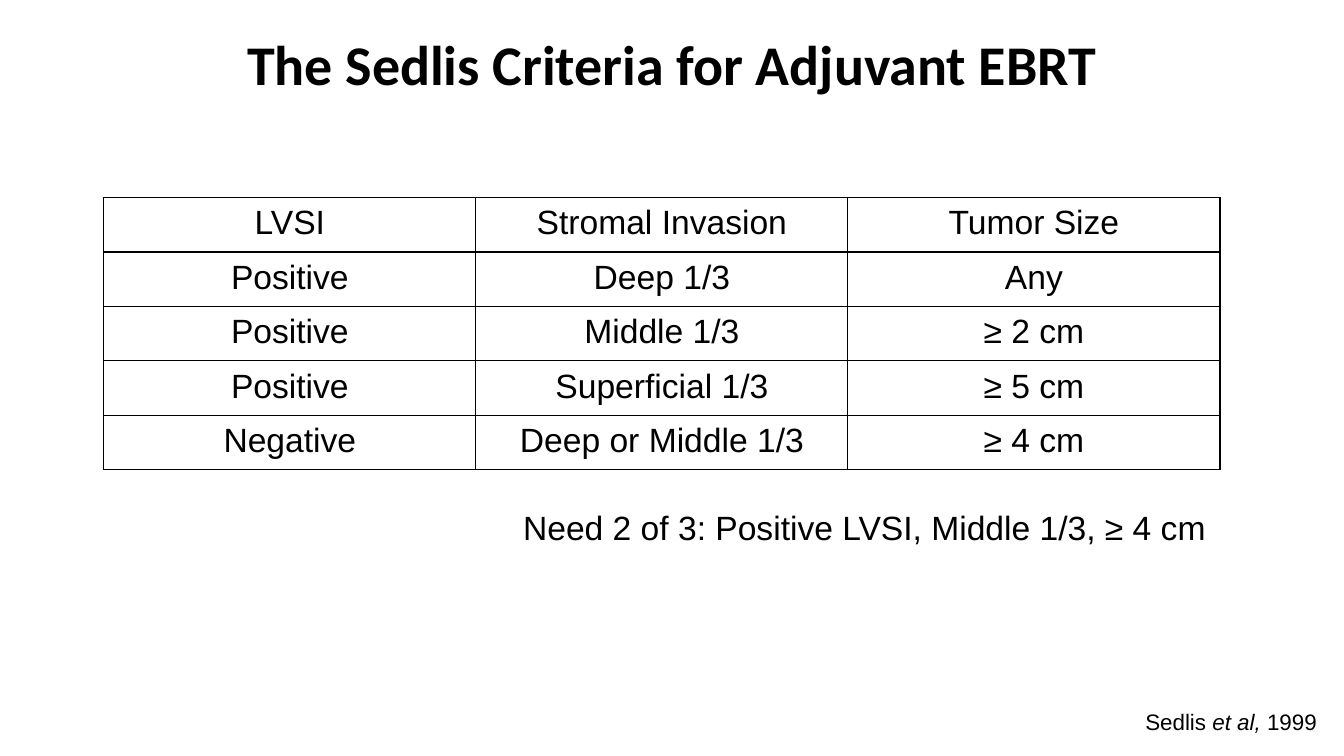
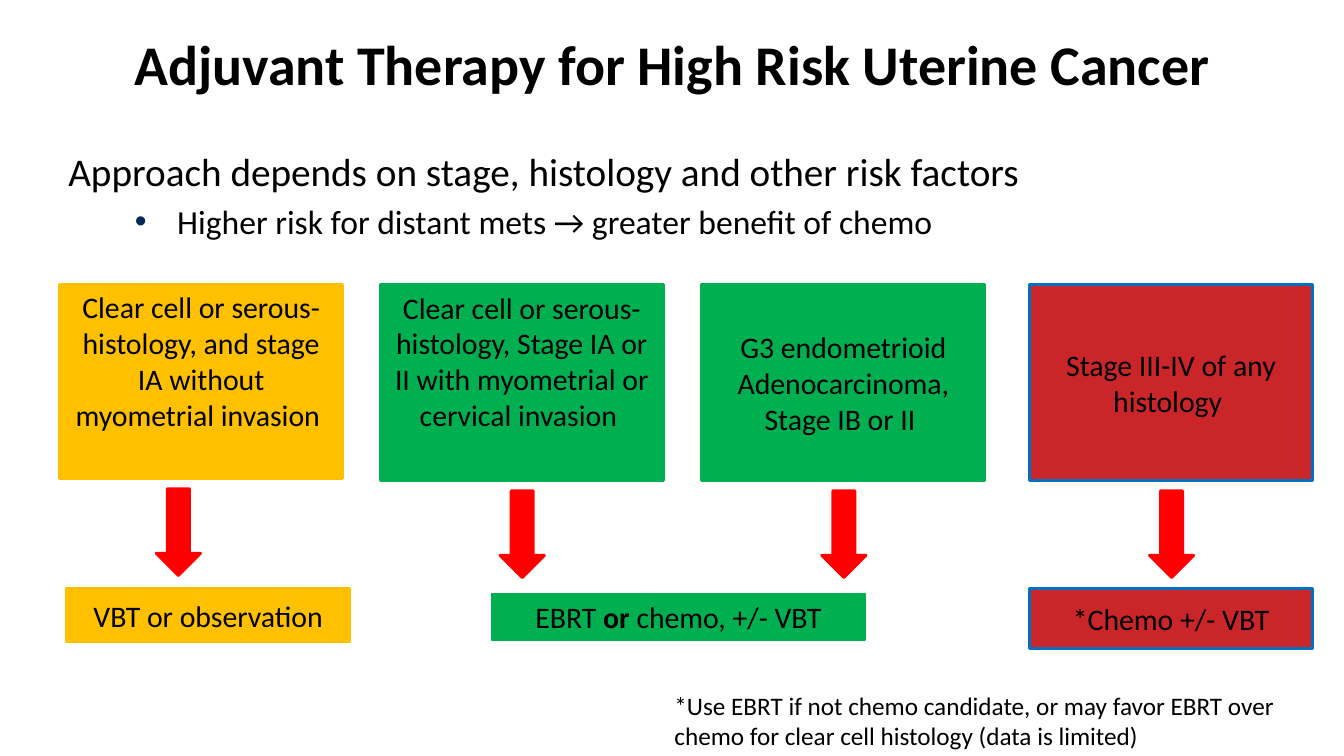
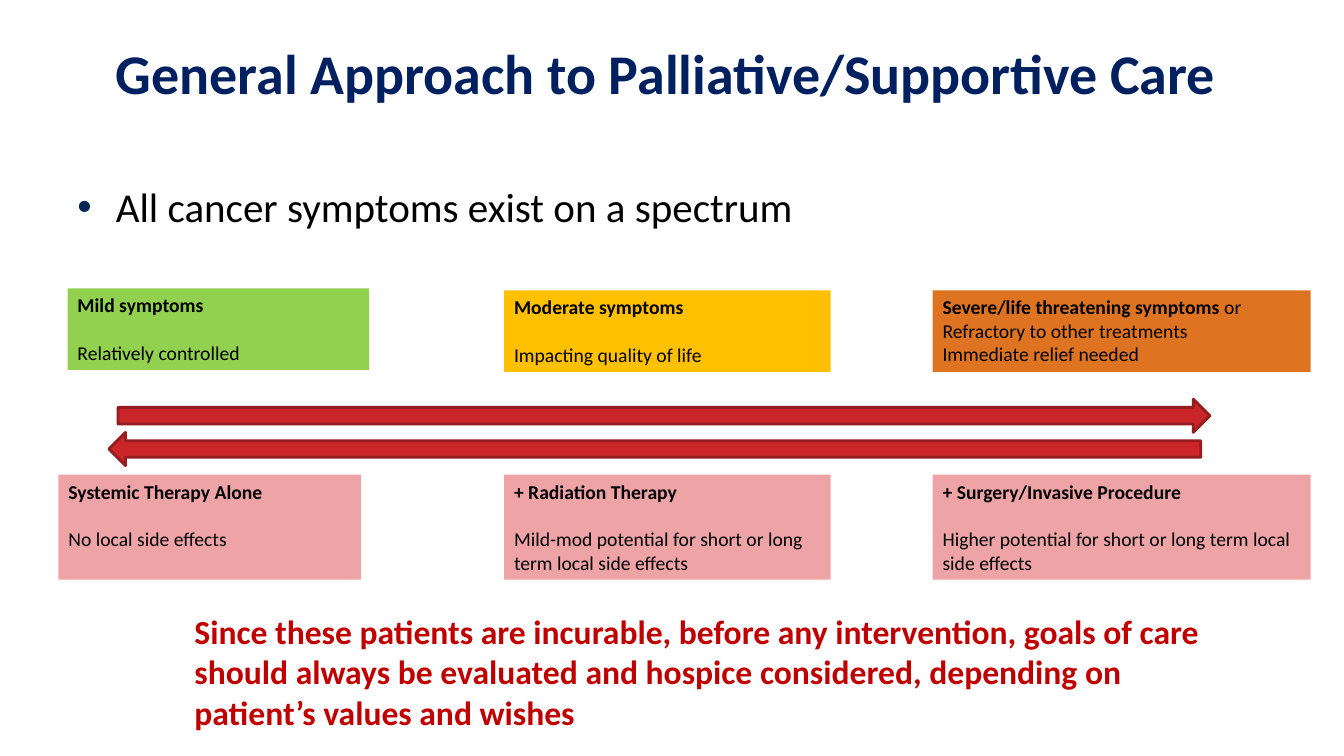
import pptx
import pptx.dml.color
import pptx.enum.shapes
import pptx.enum.text
import pptx.oxml
import pptx.oxml.ns
import pptx.util
from pptx.util import Inches

COLORS = {
    "black": "000000", "navy": "002060", "bullet": "002855", "amber": "FFC000",
    "green": "00B050", "red": "CA262A", "dark_red": "951C1F", "blue": "0070C0",
    "arrow": "FF0000", "lime": "92D050", "orange": "DE7422", "pink": "EEA4A6",
    "warning": "C00000",
}
ALIGN = pptx.enum.text.PP_ALIGN
ANCHOR = pptx.enum.text.MSO_ANCHOR
SHAPE = pptx.enum.shapes.MSO_SHAPE
WIDE_INSETS = (0.13, 0.07)
NARROW_INSETS = (0.1, 0.05)
BLANK_LAYOUT = 6


def rgb(name):
    return pptx.dml.color.RGBColor.from_string(COLORS[name])


def add_child(parent, xml):
    child = pptx.oxml.parse_xml(
        xml.replace("/>", f" {pptx.oxml.ns.nsdecls('a')}/>", 1)
        if xml.endswith("/>") and xml.count("<") == 1
        else xml.replace(">", f" {pptx.oxml.ns.nsdecls('a')}>", 1))
    parent.append(child)


def add_bullet(paragraph, left, hanging):
    properties = paragraph._p.get_or_add_pPr()
    properties.set("marL", str(Inches(left)))
    properties.set("indent", str(-Inches(hanging)))
    add_child(properties, f'<a:buClr><a:srgbClr val="{COLORS["bullet"]}"/></a:buClr>')
    add_child(properties, '<a:buFont typeface="Arial"/>')
    add_child(properties, '<a:buChar char="•"/>')


def add_run(paragraph, text, size, font="Calibri", color="black", bold=False, italic=False):
    run = paragraph.add_run()
    run.text = text
    run.font.name = font
    run.font.size = pptx.util.Pt(size)
    run.font.bold = bold
    run.font.italic = italic
    run.font.color.rgb = rgb(color)


def write(frame, paragraphs, size, align=ALIGN.LEFT, anchor=ANCHOR.TOP,
          insets=NARROW_INSETS, gap=0, **style):
    """Fill a frame; each paragraph is a list of (text, style changes)."""
    frame.word_wrap = True
    frame.vertical_anchor = anchor
    frame.margin_left = frame.margin_right = Inches(insets[0])
    frame.margin_top = frame.margin_bottom = Inches(insets[1])
    for index, runs in enumerate(paragraphs):
        paragraph = frame.add_paragraph() if index else frame.paragraphs[0]
        paragraph.alignment = align
        if index and gap:
            paragraph.space_before = pptx.util.Pt(gap)
        for text, changes in runs:
            add_run(paragraph, text, **{"size": size, **style, **changes})


def plain(text):
    return [[(text, {})]]


def add_text(slide, box, paragraphs, size, **options):
    frame = slide.shapes.add_textbox(*map(Inches, box)).text_frame
    write(frame, paragraphs, size, **options)
    return frame


def add_title(slide, text, box=(0, 0, 13.33, 1.25), **options):
    add_text(slide, box, plain(text), 40, align=ALIGN.CENTER,
             anchor=ANCHOR.MIDDLE, bold=True, **options)


def add_block(slide, box, fill, line=None, line_width=2, kind=SHAPE.RECTANGLE):
    shape = slide.shapes.add_shape(kind, *map(Inches, box))
    shape.shadow.inherit = False
    shape.fill.solid()
    shape.fill.fore_color.rgb = rgb(fill)
    if line:
        shape.line.color.rgb = rgb(line)
        shape.line.width = pptx.util.Pt(line_width)
    else:
        shape.line.fill.background()
    return shape


def add_borders(cell):
    properties = cell._tc.get_or_add_tcPr()
    for side in ("lnL", "lnR", "lnT", "lnB"):
        add_child(properties, f'<a:{side} w="12700"><a:solidFill><a:srgbClr '
                              f'val="{COLORS["black"]}"/></a:solidFill></a:{side}>')


def add_grid(slide, left, top, column_width, row_height, rows):
    table = slide.shapes.add_table(
        len(rows), len(rows[0]), Inches(left), Inches(top),
        Inches(column_width * len(rows[0])), Inches(row_height * len(rows))).table
    table.first_row = table.horz_banding = False
    for column in table.columns:
        column.width = Inches(column_width)
    for row, texts in zip(table.rows, rows):
        row.height = Inches(row_height)
        for cell, text in zip(row.cells, texts):
            add_borders(cell)
            cell.fill.background()
            cell.margin_left = cell.margin_right = Inches(WIDE_INSETS[0])
            cell.margin_top = cell.margin_bottom = Inches(WIDE_INSETS[1])
            paragraph = cell.text_frame.paragraphs[0]
            paragraph.alignment = ALIGN.CENTER
            add_run(paragraph, text, 24, font="Arial")


def build_sedlis_slide(slide):
    add_title(slide, "The Sedlis Criteria for Adjuvant EBRT", insets=WIDE_INSETS)
    add_grid(slide, 1.03, 1.96, 3.69, 0.54, [
        ("LVSI", "Stromal Invasion", "Tumor Size"),
        ("Positive", "Deep 1/3", "Any"),
        ("Positive", "Middle 1/3", "≥ 2 cm"),
        ("Positive", "Superficial 1/3", "≥ 5 cm"),
        ("Negative", "Deep or Middle 1/3", "≥ 4 cm"),
    ])
    add_text(slide, (4.11, 4.96, 7.98, 0.54),
             plain("Need 2 of 3: Positive LVSI, Middle 1/3, ≥ 4 cm"), 24,
             align=ALIGN.RIGHT, insets=WIDE_INSETS, font="Arial")
    add_text(slide, (11.23, 6.96, 2.1, 0.4),
             [[("Sedlis ", {}), ("et al, ", {"italic": True}), ("1999", {})]], 16,
             insets=WIDE_INSETS, font="Arial")


def build_uterine_slide(slide):
    add_title(slide, "Adjuvant Therapy for High Risk Uterine Cancer", insets=WIDE_INSETS)
    approach = add_text(slide, (0.58, 1.41, 12.44, 1.4), [
        [("Approach depends on stage, histology and other risk factors", {})],
        [("Higher risk for distant mets → greater benefit of chemo", {"size": 24})],
    ], 28, gap=5)
    add_bullet(approach.paragraphs[1], 1.08, 0.42)

    card_top, card_width = 2.82, 2.81
    # left, height, arrow offset, fill, line, anchor, text
    groups = [
        (0.59, 1.93, 0.96, "amber", "amber", ANCHOR.TOP,
         "Clear cell or serous-histology, and stage IA without myometrial invasion "),
        (3.77, 1.95, 1.19, "green", "green", ANCHOR.TOP,
         "Clear cell or serous-histology, Stage IA or II with myometrial or cervical invasion "),
        (6.96, 1.95, 1.19, "green", "green", ANCHOR.MIDDLE,
         "G3 endometrioid Adenocarcinoma, Stage IB or II "),
        (10.21, 1.95, 1.19, "red", "blue", ANCHOR.MIDDLE,
         "Stage III-IV of any histology "),
    ]
    for left, height, offset, fill, line, anchor, text in groups:
        card = add_block(slide, (left, card_top, card_width, height), fill, line)
        write(card.text_frame, plain(text), 21.3, align=ALIGN.CENTER, anchor=anchor)
        add_block(slide, (left + offset, card_top + height + 0.1, 0.44, 0.86),
                  "arrow", "arrow", kind=SHAPE.DOWN_ARROW)

    treatments = [
        ((0.66, 5.84, card_width, 0.53), "amber", "amber", 2, plain("VBT or observation")),
        ((4.88, 5.89, 3.7, 0.46), "green", "green", 0.75,
         [[("EBRT ", {}), ("or", {"bold": True}), (" chemo, +/- VBT", {})]]),
        ((10.21, 5.84, card_width, 0.59), "red", "blue", 2, plain("*Chemo +/- VBT")),
    ]
    for box, fill, line, line_width, paragraphs in treatments:
        block = add_block(slide, box, fill, line, line_width)
        write(block.text_frame, paragraphs, 21.3, align=ALIGN.CENTER, anchor=ANCHOR.MIDDLE)
    add_text(slide, (6.59, 6.8, 6.75, 0.71),
             plain("*Use EBRT if not chemo candidate, or may favor EBRT over "
                   "chemo for clear cell histology (data is limited)"), 18)


def build_palliative_slide(slide):
    add_title(slide, "General Approach to Palliative/Supportive Care ",
              box=(0, 0.01, 13.33, 1.41), color="navy")
    spectrum = add_text(slide, (0.67, 1.75, 12.08, 0.7),
                        plain("All cancer symptoms exist on a spectrum"), 29.3)
    add_bullet(spectrum.paragraphs[0], 0.38, 0.38)
    for left, top, kind in ((1.17, 3.96, SHAPE.RIGHT_ARROW), (1.08, 4.29, SHAPE.LEFT_ARROW)):
        add_block(slide, (left, top, 10.83, 0.33), "red", "dark_red", kind=kind)

    bold = {"bold": True}
    line_gap = 17
    boxes = [
        ((0.67, 2.86, 2.99, 0.81), "lime", line_gap,
         [[("Mild symptoms", bold)], [("Relatively controlled", {})]]),
        ((5, 2.88, 3.24, 0.81), "amber", line_gap,
         [[("Moderate symptoms", bold)], [("Impacting quality of life", {})]]),
        ((9.25, 2.88, 3.75, 0.81), "orange", 0,
         [[("Severe/life threatening symptoms ", bold), ("or", {})],
          [("Refractory to other treatments", {})], [("Immediate relief needed", {})]]),
        ((0.58, 4.71, 3, 1.04), "pink", line_gap,
         [[("Systemic Therapy Alone", bold)], [("No local side effects", {})]]),
        ((5, 4.71, 3.24, 1.04), "pink", line_gap,
         [[("+ Radiation Therapy", bold)],
          [("Mild-mod potential for short or long term local side effects", {})]]),
        ((9.25, 4.71, 3.75, 1.04), "pink", line_gap,
         [[("+ Surgery/Invasive Procedure", bold)],
          [("Higher potential for short or long term local side effects", {})]]),
    ]
    for box, fill, gap, paragraphs in boxes:
        write(add_block(slide, box, fill).text_frame, paragraphs, 14, gap=gap)
    add_text(slide, (1.83, 6.01, 10.32, 1.31),
             plain("Since these patients are incurable, before any intervention, goals of care "
                   "should always be evaluated and hospice considered, depending on "
                   "patient’s values and wishes"), 24, color="warning", bold=True)


def main():
    presentation = pptx.Presentation()
    presentation.slide_width = Inches(13.33)
    presentation.slide_height = Inches(7.5)
    layout = presentation.slide_layouts[BLANK_LAYOUT]
    for build in (build_sedlis_slide, build_uterine_slide, build_palliative_slide):
        build(presentation.slides.add_slide(layout))
    presentation.save("out.pptx")


if __name__ == "__main__":
    main()
